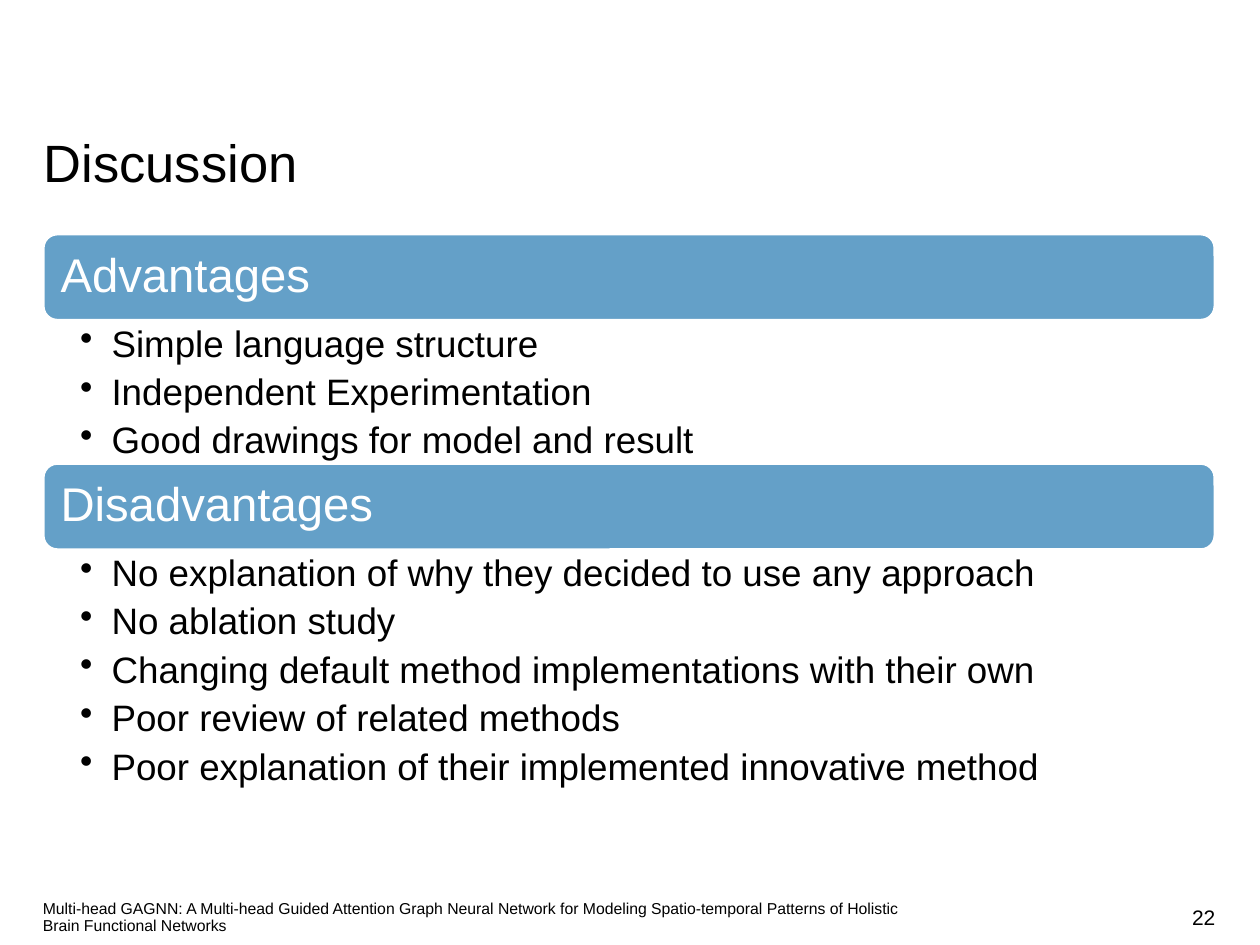
from lxml.etree import SubElement
from pptx import Presentation
from pptx.dml.color import RGBColor
from pptx.enum.shapes import MSO_SHAPE
from pptx.enum.text import MSO_ANCHOR, PP_ALIGN
from pptx.oxml.ns import qn
from pptx.util import Pt

TITLE = "Discussion"
SECTIONS = [
    ("Advantages", [
        "Simple language structure",
        "Independent Experimentation",
        "Good drawings for model and result",
    ]),
    ("Disadvantages", [
        "No explanation of why they decided to use any approach",
        "No ablation study",
        "Changing default method implementations with their own",
        "Poor review of related methods",
        "Poor explanation of their implemented innovative method",
    ]),
]
FOOTER = ("Multi-head GAGNN: A Multi-head Guided Attention Graph Neural Network "
          "for Modeling Spatio-temporal Patterns of Holistic Brain Functional Networks")
PAGE_NUMBER = "22"

FONT = "Arial"
BLACK = RGBColor(0, 0, 0)
WHITE = RGBColor(255, 255, 255)
BLUE = RGBColor(0x64, 0xA0, 0xC8)

LEFT, WIDTH = 24.5, 670
SECTIONS_TOP = 133.5
BAR_HEIGHT = 49.7
LINE_PITCH, LIST_PADDING = 26.25, 2.65
FOOTER_TOP, FOOTER_HEIGHT, FOOTER_WIDTH = 510, 28.5, 509
BULLET_INDENT = 18


def write_text(shape, lines, size, color=BLACK, align=PP_ALIGN.LEFT,
               anchor=MSO_ANCHOR.TOP, insets=(0, 0, 0, 0), spacing=None,
               after=0, bullet=None):
    frame = shape.text_frame
    frame.word_wrap = True
    frame.vertical_anchor = anchor
    (frame.margin_left, frame.margin_top,
     frame.margin_right, frame.margin_bottom) = map(Pt, insets)
    for index, line in enumerate(lines):
        paragraph = frame.add_paragraph() if index else frame.paragraphs[0]
        paragraph.text = line
        paragraph.alignment = align
        paragraph.space_before = Pt(0)
        paragraph.space_after = Pt(after)
        paragraph.line_spacing = spacing
        if bullet:
            paragraph.level = 1
            properties = paragraph._p.get_or_add_pPr()
            properties.set("marL", str(Pt(BULLET_INDENT)))
            properties.set("indent", str(-Pt(BULLET_INDENT)))
            SubElement(properties, qn("a:buChar")).set("char", bullet)
        paragraph.font.name = FONT
        paragraph.font.size = Pt(size)
        paragraph.font.color.rgb = color


def add_text(slide, box, lines, size, **text_format):
    write_text(slide.shapes.add_textbox(*map(Pt, box)), lines, size, **text_format)


def add_bar(slide, top, heading):
    bar = slide.shapes.add_shape(MSO_SHAPE.ROUNDED_RECTANGLE,
                                 *map(Pt, (LEFT, top, WIDTH, BAR_HEIGHT)))
    bar.shadow.inherit = False
    bar.fill.solid()
    bar.fill.fore_color.rgb = BLUE
    bar.line.color.rgb = WHITE
    bar.line.width = Pt(2)
    write_text(bar, [heading], 27, color=WHITE, anchor=MSO_ANCHOR.MIDDLE,
               insets=(7.7, 7.7, 7.7, 7.7), spacing=0.9, after=11.3)


def main():
    presentation = Presentation()
    presentation.slide_width, presentation.slide_height = Pt(720), Pt(540)
    slide = presentation.slides.add_slide(presentation.slide_layouts[5])

    title = slide.shapes.title
    title.left, title.top, title.width, title.height = map(Pt, (25, 78.5, WIDTH, 32.5))
    write_text(title, [TITLE], 30, spacing=Pt(32))

    top = SECTIONS_TOP
    for heading, points in SECTIONS:
        add_bar(slide, top, heading)
        top += BAR_HEIGHT
        list_height = LIST_PADDING + LINE_PITCH * len(points)
        add_text(slide, (LEFT, top, WIDTH, list_height), points, 21,
                 insets=(21.3, 2.7, 15, 2.7), spacing=0.9, after=5, bullet="•")
        top += list_height

    footer_format = dict(anchor=MSO_ANCHOR.MIDDLE, insets=(0, 3.6, 0, 3.6), after=6)
    add_text(slide, (LEFT, FOOTER_TOP, FOOTER_WIDTH, FOOTER_HEIGHT), [FOOTER], 9,
             spacing=0.9, **footer_format)
    add_text(slide, (LEFT + FOOTER_WIDTH, FOOTER_TOP, WIDTH - FOOTER_WIDTH, FOOTER_HEIGHT),
             [PAGE_NUMBER], 12, align=PP_ALIGN.RIGHT, **footer_format)

    presentation.save("out.pptx")


if __name__ == "__main__":
    main()
